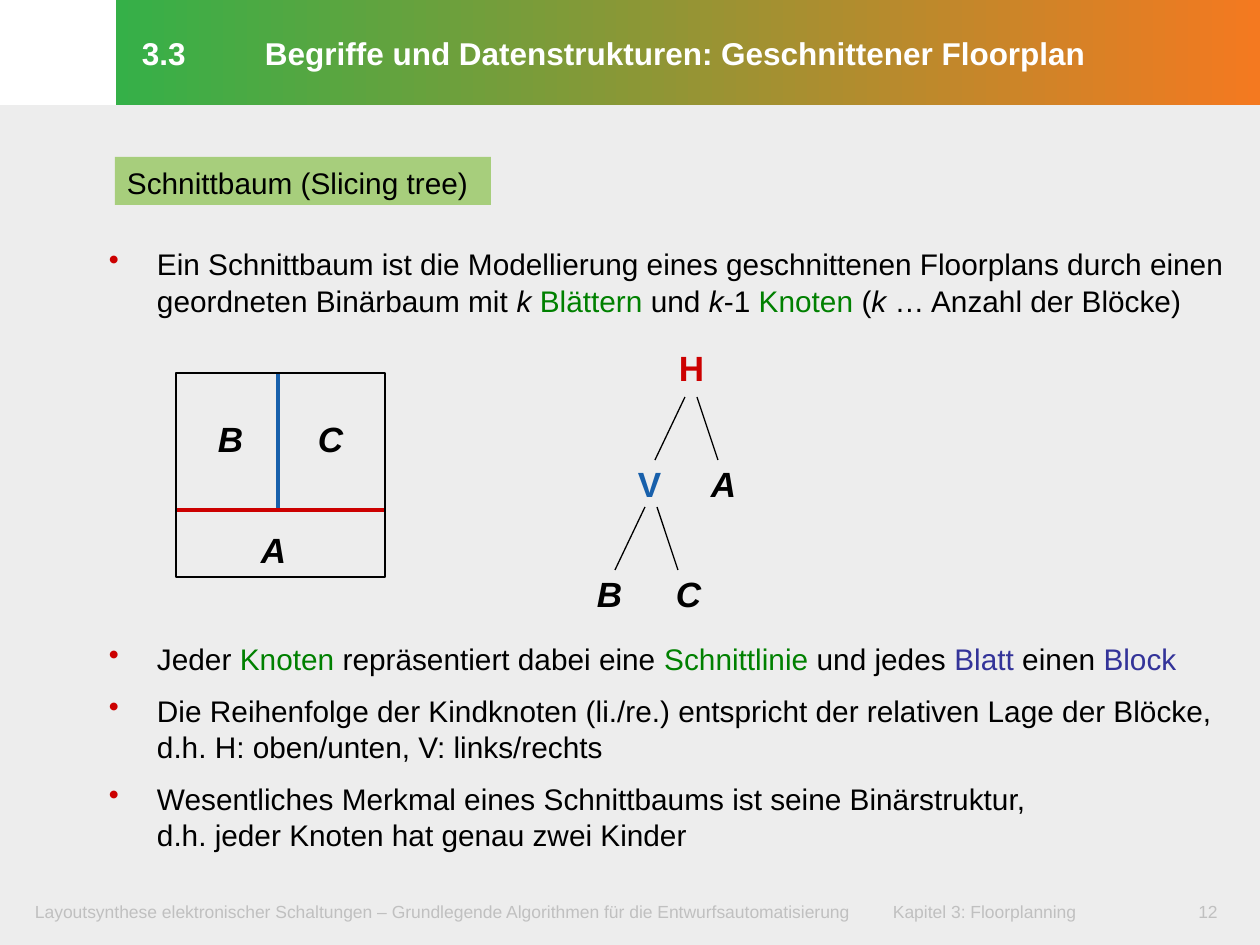
from dataclasses import dataclass

from lxml import etree
from pptx import Presentation
from pptx import util as u
from pptx.dml.color import RGBColor
from pptx.enum import shapes, text
from pptx.oxml.ns import qn

PX = 914400 / 126
FONT = "Arial"
WHITE = RGBColor(0xFF, 0xFF, 0xFF)
BLACK = RGBColor(0, 0, 0)
PANEL_GREY = RGBColor(0xED, 0xED, 0xED)
FOOTER_GREY = RGBColor(0xC0, 0xC0, 0xC0)
TITLE_GREEN = RGBColor(0x35, 0xB0, 0x48)
TITLE_ORANGE = RGBColor(0xF4, 0x79, 0x20)
TOPIC_GREEN = RGBColor(0xA7, 0xCE, 0x7C)
RED = RGBColor(0xCC, 0, 0)
BLUE = RGBColor(0x18, 0x60, 0xAB)
GREEN = RGBColor(0, 0x80, 0)
VIOLET = RGBColor(0x33, 0x33, 0x99)


@dataclass(frozen=True)
class Letter:
    label: str
    left: int
    top: int
    color: RGBColor = BLACK
    italic: bool = True


@dataclass(frozen=True)
class Stroke:
    x1: int
    y1: int
    x2: int
    y2: int
    color: RGBColor = BLACK
    points: float = 0.75


@dataclass(frozen=True)
class Span:
    words: str
    color: RGBColor = BLACK
    italic: bool = False


FLOORPLAN_LINES = [
    Stroke(278, 373, 278, 510, BLUE, 2.25),
    Stroke(176, 373, 385, 373, BLACK, 1.25),
    Stroke(176, 510, 385, 510, RED, 2.25),
]
FLOORPLAN_BLOCKS = [Letter("A", 247, 522), Letter("B", 204, 411), Letter("C", 304, 411)]

TREE_NODES = [
    Letter("V", 624, 456, BLUE, False),
    Letter("H", 665, 340, RED, False),
    Letter("A", 697, 456),
    Letter("B", 583, 566),
    Letter("C", 662, 566),
]
TREE_EDGES = [
    Stroke(685, 397, 655, 460),
    Stroke(697, 397, 718, 460),
    Stroke(645, 507, 615, 570),
    Stroke(657, 507, 678, 570),
]

DEFINITION = [
    [
        Span("Ein Schnittbaum ist die Modellierung eines geschnittenen Floorplans "
             "durch einen geordneten Binärbaum mit "),
        Span("k ", italic=True),
        Span("Blättern", GREEN),
        Span(" und "),
        Span("k", italic=True),
        Span("-1 "),
        Span("Knoten ", GREEN),
        Span("("),
        Span("k", italic=True),
        Span(" … Anzahl der Blöcke)"),
    ],
]
PROPERTIES = [
    [
        Span("Jeder "),
        Span("Knoten", GREEN),
        Span(" repräsentiert dabei eine "),
        Span("Schnittlinie", GREEN),
        Span(" und jedes "),
        Span("Blatt", VIOLET),
        Span(" einen "),
        Span("Block", VIOLET),
    ],
    [Span("Die Reihenfolge der Kindknoten (li./re.) entspricht der relativen Lage der Blöcke,\n"
          "d.h. H: oben/unten, V: links/rechts")],
    [Span("Wesentliches Merkmal eines Schnittbaums ist seine Binärstruktur,\n"
          "d.h. jeder Knoten hat genau zwei Kinder")],
]


def px(length: int) -> int:
    return round(length * PX)


def set_font(paragraph, size: float, color: RGBColor, bold=False, italic=False) -> None:
    font = paragraph.font
    font.name, font.size, font.bold, font.italic = FONT, u.Pt(size), bold, italic
    font.color.rgb = color


def set_frame(shape, insets: tuple, wrap=True, anchor=text.MSO_ANCHOR.TOP):
    frame = shape.text_frame
    frame.word_wrap = wrap
    frame.vertical_anchor = anchor
    (frame.margin_left, frame.margin_top,
     frame.margin_right, frame.margin_bottom) = map(px, insets)
    return frame


def add_box(parent, left: int, top: int, width: int, height: int):
    box = parent.add_shape(shapes.MSO_SHAPE.RECTANGLE, px(left), px(top), px(width), px(height))
    box.shadow.inherit = False
    box.line.fill.background()
    return box


def add_stroke(parent, stroke: Stroke) -> None:
    line = parent.add_connector(shapes.MSO_CONNECTOR.STRAIGHT, px(stroke.x1), px(stroke.y1),
                                px(stroke.x2), px(stroke.y2))
    line.line.color.rgb = stroke.color
    line.line.width = u.Pt(stroke.points)
    etree.SubElement(line._element.spPr, qn("a:effectLst"))


def add_letter(parent, letter: Letter) -> None:
    box = parent.add_textbox(px(letter.left), px(letter.top), px(52), px(55))
    paragraph = set_frame(box, (14, 6, 14, 6), wrap=False).paragraphs[0]
    paragraph.text = letter.label
    set_font(paragraph, 20, letter.color, bold=True, italic=letter.italic)


def add_footer(parent, words: str, left: int, width: int, align=text.PP_ALIGN.LEFT) -> None:
    box = parent.add_textbox(px(left), px(893), px(width), px(40))
    paragraph = set_frame(box, (15, 8, 15, 8)).paragraphs[0]
    paragraph.text = words
    paragraph.alignment = align
    set_font(paragraph, 10, FOOTER_GREY)


def add_bullets(parent, bullets: list, top: int, height: int) -> None:
    box = parent.add_textbox(px(83), px(top), px(1157), px(height))
    frame = set_frame(box, (26, 6, 13, 6))
    for index, spans in enumerate(bullets):
        paragraph = frame.add_paragraph() if index else frame.paragraphs[0]
        paragraph.line_spacing = u.Pt(20.9)
        paragraph.space_before = u.Pt(8.5 if index else 0)
        properties = paragraph._p.get_or_add_pPr()
        properties.set("marL", str(px(48)))
        properties.set("indent", str(px(-48)))
        bullet_color = etree.SubElement(properties, qn("a:buClr"))
        etree.SubElement(bullet_color, qn("a:srgbClr"), val=str(RED))
        etree.SubElement(properties, qn("a:buChar"), char="•")
        set_font(paragraph, 17, BLACK)
        for span in spans:
            for row, words in enumerate(span.words.split("\n")):
                if row:
                    paragraph.add_line_break()
                run = paragraph.add_run()
                run.text = words
                if span.color != BLACK:
                    run.font.color.rgb = span.color
                if span.italic:
                    run.font.italic = True


def add_title(parent) -> None:
    title = add_box(parent, 116, 0, 1144, 105)
    title.fill.gradient()
    title.fill.gradient_angle = 0
    for stop, color in zip(title.fill.gradient_stops, (TITLE_GREEN, TITLE_ORANGE)):
        stop.color.rgb = color
    paragraph = set_frame(title, (26, 6, 13, 9), anchor=text.MSO_ANCHOR.MIDDLE).paragraphs[0]
    paragraph.text = "3.3\tBegriffe und Datenstrukturen: Geschnittener Floorplan"
    paragraph.alignment = text.PP_ALIGN.LEFT
    paragraph.line_spacing = u.Pt(23.5)
    tabs = etree.SubElement(paragraph._p.get_or_add_pPr(), qn("a:tabLst"))
    etree.SubElement(tabs, qn("a:tab"), pos=str(px(123)), algn="l")
    set_font(paragraph, 18, WHITE, bold=True)


def add_topic(parent) -> None:
    topic = add_box(parent, 115, 157, 376, 48)
    topic.fill.solid()
    topic.fill.fore_color.rgb = TOPIC_GREEN
    paragraph = set_frame(topic, (12, 8, 12, 6)).paragraphs[0]
    paragraph.text = "Schnittbaum (Slicing tree)"
    paragraph.alignment = text.PP_ALIGN.LEFT
    set_font(paragraph, 17, BLACK)


def add_diagram(parent, strokes: list, letters: list):
    diagram = parent.add_group_shape().shapes
    for stroke in strokes:
        add_stroke(diagram, stroke)
    for letter in letters:
        add_letter(diagram, letter)
    return diagram


def main() -> None:
    deck = Presentation()
    deck.slide_width, deck.slide_height = px(1260), px(945)
    canvas = deck.slides.add_slide(deck.slide_layouts[6]).shapes

    panel = add_box(canvas, 0, 105, 1260, 840)
    panel.fill.solid()
    panel.fill.fore_color.rgb = PANEL_GREY
    add_footer(canvas, "Layoutsynthese elektronischer Schaltungen – Grundlegende Algorithmen "
                       "für die Entwurfsautomatisierung", 20, 858)
    add_footer(canvas, "Kapitel 3: Floorplanning", 878, 287)
    add_footer(canvas, "12", 1171, 74, text.PP_ALIGN.CENTER)
    add_topic(canvas)
    add_title(canvas)
    add_bullets(canvas, DEFINITION, 239, 90)
    add_bullets(canvas, PROPERTIES, 634, 215)

    floorplan = add_diagram(canvas, FLOORPLAN_LINES, FLOORPLAN_BLOCKS)
    outline = add_box(floorplan, 176, 373, 209, 204)
    outline.fill.background()
    outline.line.color.rgb = BLACK
    outline.line.width = u.Pt(1.5)
    add_diagram(canvas, TREE_EDGES, TREE_NODES)

    deck.save("out.pptx")


if __name__ == "__main__":
    main()
